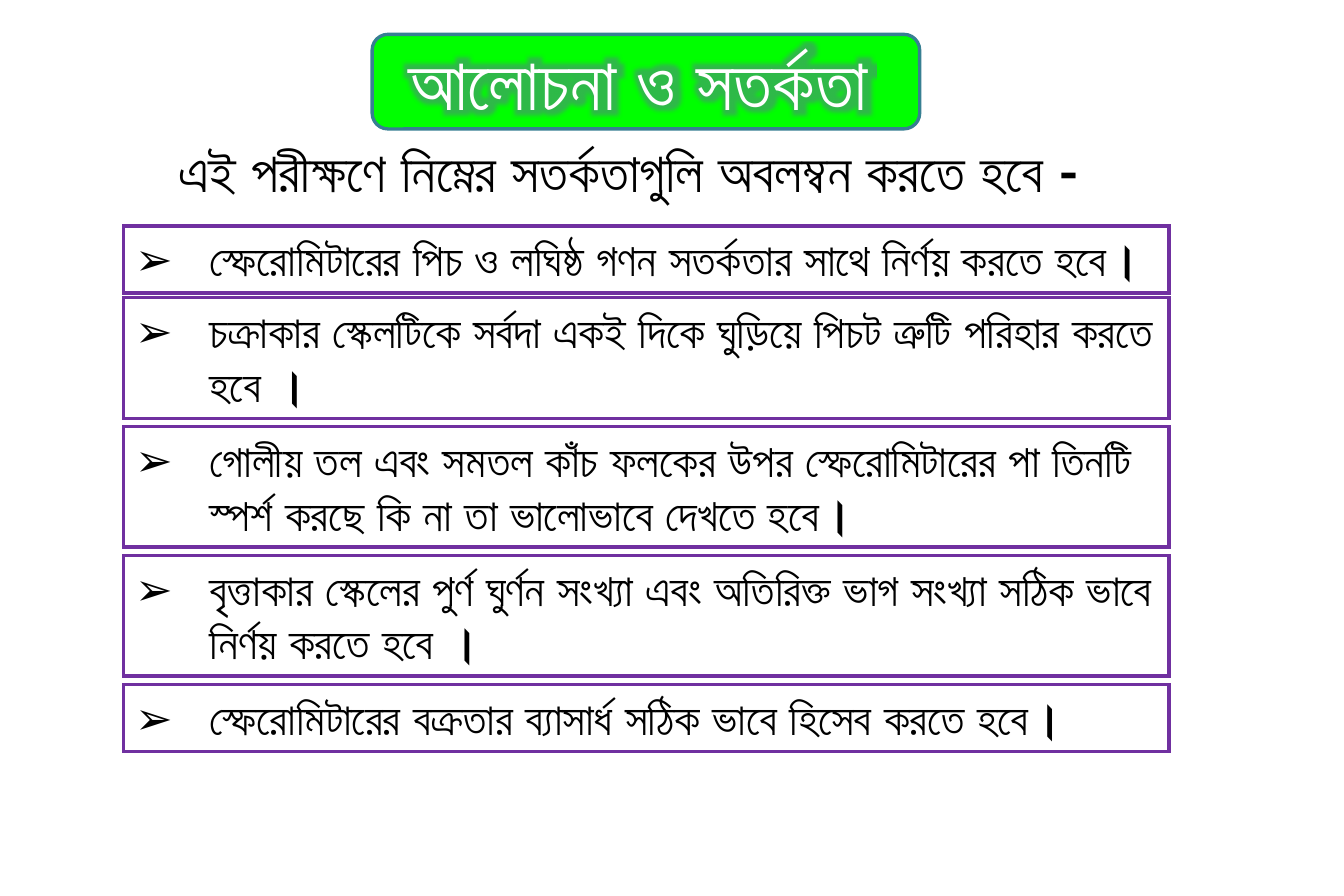
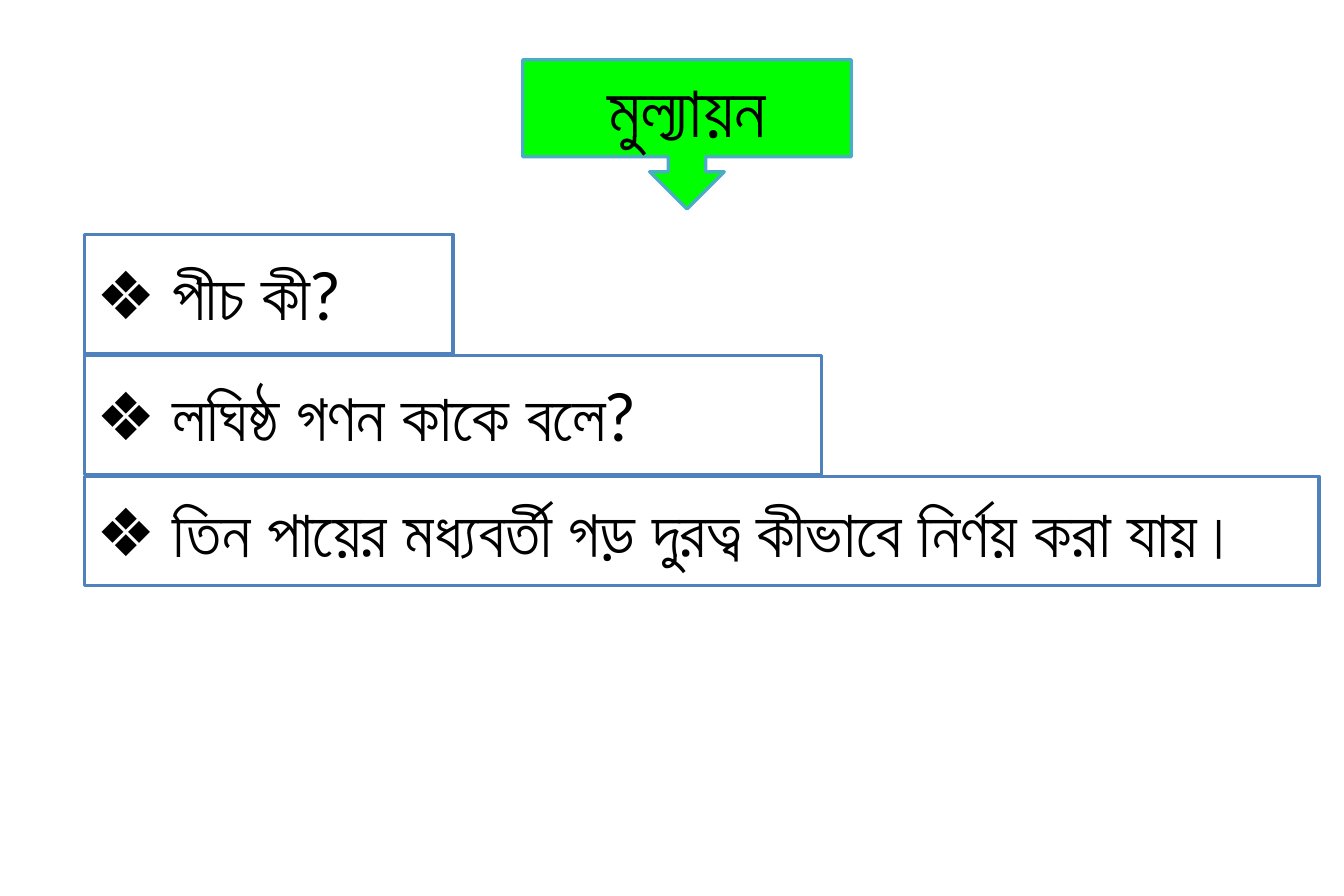
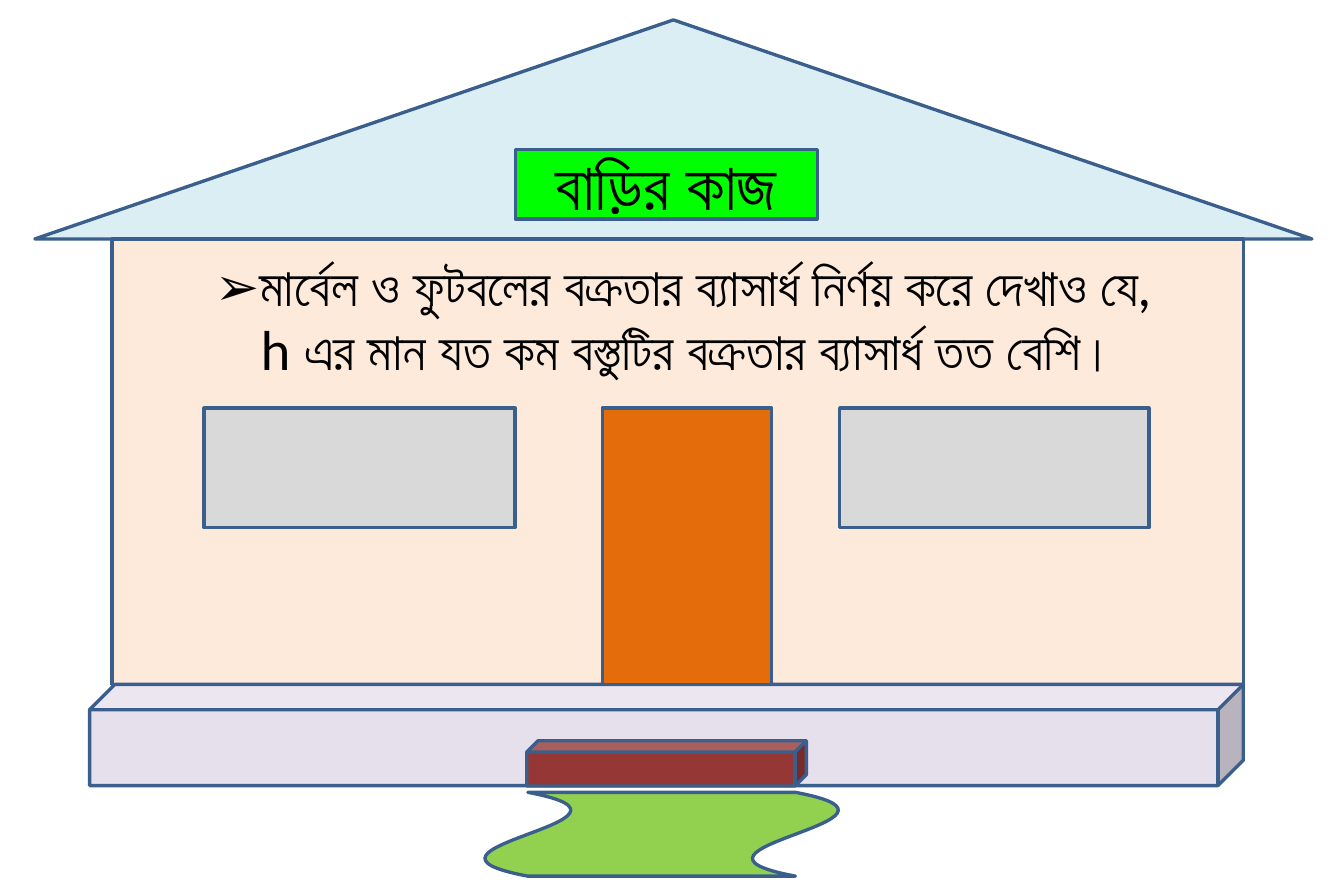
from dataclasses import dataclass

from pptx import Presentation
from pptx.dml.color import RGBColor as Color
from pptx.enum.shapes import MSO_SHAPE as Kind
from pptx.enum.text import MSO_ANCHOR as Anchor, PP_ALIGN as Align
from pptx.oxml.ns import qn
from pptx.util import Pt
from lxml.etree import SubElement as Sub


@dataclass(frozen=True)
class Theme:
    font: str = "Lato"
    ink: str = "000000"
    white: str = "FFFFFF"
    green: str = "00FF00"
    teal: str = "377F92"
    aqua: str = "4BACC6"
    blue: str = "4F81BD"
    navy: str = "3A5F8C"
    purple: str = "7030A0"
    glow: str = "7650B8"
    roof: str = "DBEEF4"
    wall: str = "FDEADA"
    grass: str = "92D050"
    base: str = "E6E0EC"
    step: str = "953735"
    door: str = "E46C0A"
    pane: str = "D9D9D9"
    title: int = 44
    large: int = 40
    lead: int = 33
    task: int = 32
    body: int = 27
    edge: float = 2
    thick: float = 2.25


T = Theme()

# Letters with a dot below, joined into one code point
JOINED = {"ড" + "়": chr(0x9DC), "য" + "়": chr(0x9DF)}

# Each rule: text, top, number of lines
RULES = [
    ("স্ফেরোমিটারের পিচ ও লঘিষ্ঠ গণন সতর্কতার সাথে নির্ণয় করতে হবে।", 136, 1),
    ("চক্রাকার স্কেলটিকে সর্বদা একই দিকে ঘুড়িয়ে পিচট ত্রুটি পরিহার করতে হবে ।", 179.4, 2),
    ("গোলীয় তল এবং সমতল কাঁচ ফলকের উপর স্ফেরোমিটারের পা তিনটি স্পর্শ করছে "
     "কি না তা ভালোভাবে দেখতে হবে।", 257.1, 2),
    ("বৃত্তাকার স্কেলের পুর্ণ ঘুর্ণন সংখ্যা এবং অতিরিক্ত ভাগ সংখ্যা সঠিক ভাবে "
     "নির্ণয় করতে হবে ।", 334.8, 2),
    ("স্ফেরোমিটারের বক্রতার ব্যাসার্ধ সঠিক ভাবে হিসেব করতে হবে।", 412.6, 1),
]

# Each question: text, top, width, height
ASKS = [
    ("পীচ কী?", 141.3, 222, 72),
    ("লঘিষ্ঠ গণন কাকে বলে?", 214.1, 444, 72),
    ("তিন পায়ের মধ্যবর্তী গড় দুরত্ব কীভাবে নির্ণয় করা যায়।", 287, 744, 66),
]

# House parts, back to front: kind, place, fill, turn
HOUSE = [
    (Kind.ISOSCELES_TRIANGLE, (21, 12, 769.7, 132), T.roof, 0),
    (Kind.RECTANGLE, (67.5, 144, 682, 268.5), T.wall, 0),
    (Kind.WAVE, (373.5, 395.3, 50.5, 215), T.grass, 90),
    (Kind.CUBE, (54, 412.5, 695.3, 61), T.base, 0),
    (Kind.CUBE, (317.5, 446.4, 168.5, 27.3), T.step, 0),
    (Kind.RECTANGLE, (363, 246, 102, 166.5), T.door, 0),
    (Kind.RECTANGLE, (123, 246, 187.5, 72), T.pane, 0),
    (Kind.RECTANGLE, (506, 246, 186.5, 72), T.pane, 0),
]


def tint(text):
    return Color.from_string(text)


def draw(home, kind, place, fill, line, width=T.edge):
    """Add a preset shape; fill None leaves it hollow."""
    shape = home.add_shape(kind, *map(Pt, place))
    shape.shadow.inherit = False
    if fill:
        shape.fill.solid()
        shape.fill.fore_color.rgb = tint(fill)
    else:
        shape.fill.background()
    shape.line.color.rgb = tint(line)
    shape.line.width = Pt(width)
    return shape


def mark(para, sign=None, left=0, first=0):
    """Set the indents and bullet of one paragraph."""
    props = para._p.get_or_add_pPr()
    props.set("marL", str(Pt(left)))
    props.set("indent", str(Pt(first)))
    if sign:
        Sub(props, qn("a:buFont")).set("typeface", T.font)
        Sub(props, qn("a:buChar")).set("char", sign)


def write(shape, text, size, color=T.ink, bold=False,
          align=Align.LEFT, anchor=Anchor.MIDDLE):
    """Fill a shape with text and return its paragraphs."""
    for pair, letter in JOINED.items():
        text = text.replace(pair, letter)
    frame = shape.text_frame
    frame.text = text
    frame.word_wrap = True
    frame.vertical_anchor = anchor
    for para in frame.paragraphs:
        para.alignment = align
        for run in para.runs:
            run.font.size = Pt(size)
            run.font.bold = bold
            run.font.color.rgb = tint(color)
            run.font.name = T.font
    return frame.paragraphs


def shine(run, reach, color, alpha):
    """Put a soft glow round the letters of a run."""
    props = run.font._element
    glows = Sub(props, qn("a:effectLst"))
    props.find(qn("a:solidFill")).addnext(glows)
    glow = Sub(glows, qn("a:glow"), rad=str(Pt(reach)))
    tone = Sub(glow, qn("a:srgbClr"), val=color)
    Sub(tone, qn("a:alpha"), val=str(alpha * 1000))


def cautions(home):
    # Title
    plate = draw(home, Kind.ROUNDED_RECTANGLE, (224.3, 20.7, 330, 57),
                 T.green, T.teal)
    para = write(plate, "আলোচনা ও সতর্কতা", T.title, T.white, True)[0]
    mark(para, left=12)
    shine(para.runs[0], 11, T.glow, 40)
    # Lead line
    lead = home.add_textbox(*map(Pt, (100.6, 79.7, 577.5, 47.5)))
    write(lead, "এই পরীক্ষণে নিম্নের সতর্কতাগুলি অবলম্বন করতে হবে -",
          T.lead, bold=True, anchor=Anchor.TOP)
    # Rules, with square corners
    for text, top, lines in RULES:
        box = draw(home, Kind.RECTANGLE, (74.4, top, 630, 8 + 32.4 * lines),
                   None, T.purple, T.thick)
        Sub(box.line._ln, qn("a:miter"), lim="800000")
        para = write(box, text, T.body, bold=True, anchor=Anchor.TOP)[0]
        mark(para, "➢", 45, -45)


def review(home):
    # Title
    call = draw(home, Kind.DOWN_ARROW_CALLOUT, (315, 36, 198, 90),
                T.green, T.aqua)
    write(call, "মুল্যায়ন", T.title, align=Align.CENTER)
    # Questions
    for text, top, width, high in ASKS:
        box = draw(home, Kind.RECTANGLE, (51, top, width, high),
                   T.white, T.blue)
        mark(write(box, text, T.large)[0], "❖", 46, -46)


def homework(home):
    # House
    house = home.add_group_shape().shapes
    for kind, place, fill, turn in HOUSE:
        draw(house, kind, place, fill, T.navy).rotation = turn
    # Title
    sign = draw(home, Kind.RECTANGLE, (310.5, 90, 182, 42), T.green, T.navy)
    write(sign, "বাড়ির কাজ", T.large, align=Align.CENTER)
    # Task
    task = home.add_textbox(*map(Pt, (81.5, 149.2, 660, 85)))
    first, last = write(
        task,
        "মার্বেল ও ফুটবলের বক্রতার ব্যাসার্ধ নির্ণয় করে দেখাও যে,\n"
        "h এর মান যত কম বস্তুটির বক্রতার ব্যাসার্ধ তত বেশি।",
        T.task, align=Align.CENTER, anchor=Anchor.TOP)
    mark(first, "➢")
    mark(last, left=7)


def main():
    deck = Presentation()
    deck.slide_width, deck.slide_height = Pt(810), Pt(540)
    for build in (cautions, review, homework):
        build(deck.slides.add_slide(deck.slide_layouts[6]).shapes)
    deck.save("out.pptx")


if __name__ == "__main__":
    main()
